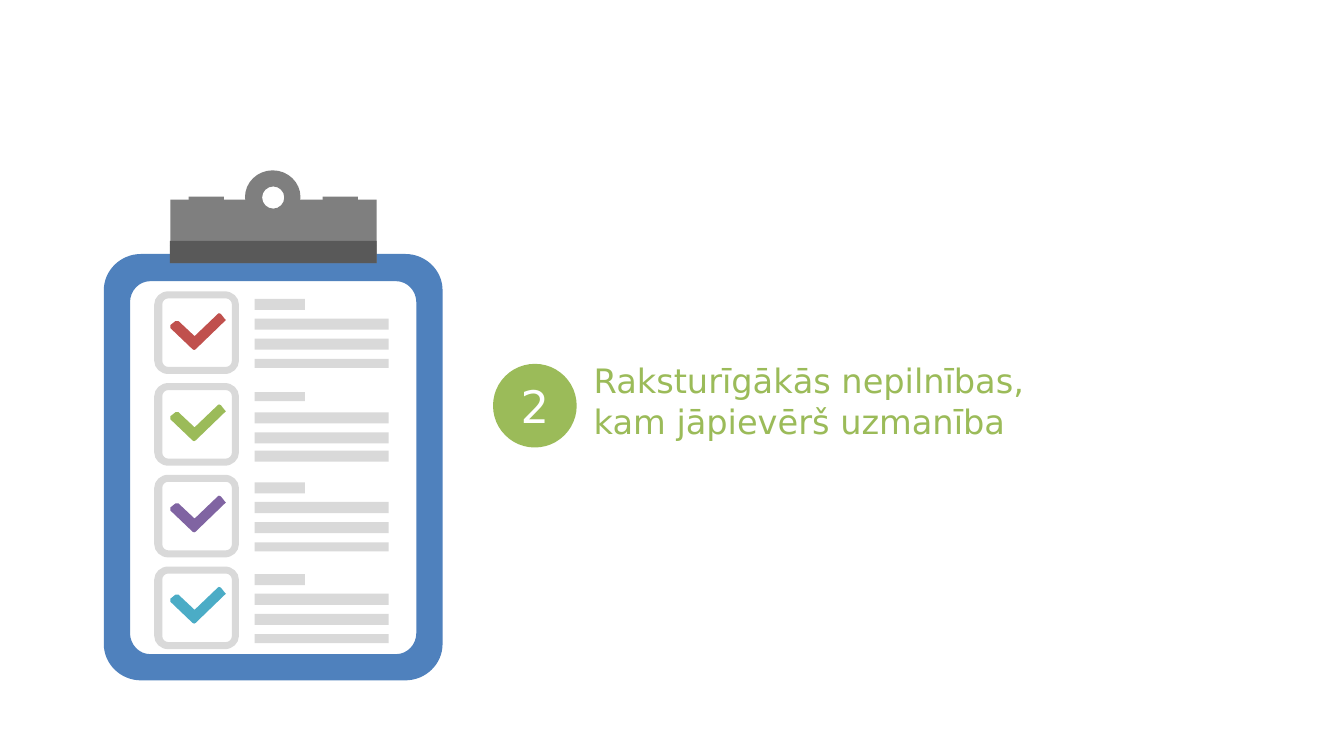
import pptx
import pptx.dml.color
import pptx.enum.shapes
import pptx.enum.text
import pptx.oxml
import pptx.util

COLORS = {
    "board": "4F81BD", "clamp": "7F7F7F", "band": "595959", "paper": "D9D9D9",
    "red": "C0504D", "green": "9BBB59", "purple": "8064A2", "teal": "4BACC6",
    "white": "FFFFFF",
}
FONT = "DejaVu Sans"
UNIT = pptx.util.Inches(0.01)  # grid cell: the slide has 1333 columns, 750 rows
RECT = pptx.enum.shapes.MSO_SHAPE.RECTANGLE
OVAL = pptx.enum.shapes.MSO_SHAPE.OVAL

prs = pptx.Presentation()
prs.slide_width, prs.slide_height = 1333 * UNIT, 750 * UNIT
s = prs.slides.add_slide(prs.slide_layouts[6])


def add_piece(fill, box=None, kind=RECT, outlines=(), dy=0):
    """Add a preset in a box, or outlines of segments: 1 point a line, 3 a curve."""
    if box:
        x, y, w, h = box
        sp = s.shapes.add_shape(kind, *(round(v * UNIT) for v in (x, y + dy, w, h)))
    else:
        fb = None
        for outline in outlines:
            points = [(round(x * UNIT), round((y + dy) * UNIT))
                      for segment in outline for x, y in segment]
            if fb:
                fb.move_to(*points[0])
            else:
                fb = s.shapes.build_freeform(*points[0], scale=1.0)
            fb.add_line_segments(points[1:], close=False)
        sp = fb.convert_to_shape()
        # Join the points of each curve, and close each outline
        path = sp._element.xpath(".//a:path")[0]
        nodes = iter(list(path))
        for outline in outlines:
            for segment in outline:
                steps = [next(nodes) for point in segment]
                last = steps[0]
                if len(steps) == 3:
                    last = pptx.oxml.parse_xml(
                        '<a:cubicBezTo xmlns:a="http://schemas.openxmlformats.org/drawingml/2006/main"/>')
                    steps[0].addprevious(last)
                    for step in steps:
                        last.append(step[0])
                        path.remove(step)
            last.addnext(pptx.oxml.parse_xml(
                '<a:close xmlns:a="http://schemas.openxmlformats.org/drawingml/2006/main"/>'))
    sp.shadow.inherit = False
    sp.fill.solid()
    sp.fill.fore_color.rgb = pptx.dml.color.RGBColor.from_string(COLORS[fill])
    sp.line.fill.background()
    return sp


def write(sp, text, size=24, color="green", align="LEFT"):
    tf = sp.text_frame
    tf.word_wrap = True
    tf.vertical_anchor = pptx.enum.text.MSO_ANCHOR.MIDDLE
    for i, line in enumerate(text.split("\n")):
        p = tf.add_paragraph() if i else tf.paragraphs[0]
        p.alignment = pptx.enum.text.PP_ALIGN[align]
        r = p.add_run()
        r.text = line
        r.font.name = FONT
        r.font.size = pptx.util.Pt(size)
        r.font.color.rgb = pptx.dml.color.RGBColor.from_string(COLORS[color])


# Rounded outlines: left, top, right, bottom, horizontal and vertical radius
rounded = {
    "board": (103, 252, 439, 675, 37, 36), "sheet": (129, 279, 413, 649, 20, 21),
    "box": (153, 289, 237, 371, 14, 13), "box hole": (161, 296, 230, 364, 6, 6),
    "ring": (243, 169, 298, 222, 27.5, 26.5), "ring hole": (260, 185, 282, 207, 11, 11),
}
outlines = {}
for name, (x1, y1, x2, y2, rx, ry) in rounded.items():
    kx, ky = 0.45 * rx, 0.45 * ry  # from a corner to the curve's handles
    outline = [
        [(x1 + rx, y1)], [(x1 + kx, y1), (x1, y1 + ky), (x1, y1 + ry)],
        [(x1, y2 - ry)], [(x1, y2 - ky), (x1 + kx, y2), (x1 + rx, y2)],
        [(x2 - rx, y2)], [(x2 - kx, y2), (x2, y2 - ky), (x2, y2 - ry)],
        [(x2, y1 + ry)], [(x2, y1 + ky), (x2 - kx, y1), (x2 - rx, y1)],
    ]
    if "ring" in name:  # a round outline has no straight sides
        outline = outline[:1] + outline[1::2]
    outlines[name] = outline

# Clipboard
add_piece("board", outlines=[outlines["sheet"], outlines["board"]])

# Clamp with a round notch under its ring
clamp = [[(286, 198)], [(285, 207), (279, 215), (271, 215)],
         [(263, 215), (256, 207), (256, 198)],
         [(169, 198)], [(169, 261)], [(373.5, 261)], [(373.5, 198)]]
add_piece("clamp", outlines=[clamp])
add_piece("band", (168.5, 244, 205, 17))
add_piece("clamp", outlines=[outlines["ring hole"], outlines["ring"]])
add_piece("band", (168.5, 239, 205, 5))
for x in (187, 320):
    add_piece("clamp", (x, 195, 35, 8.5))

# Checklist rows: framed box, text bars and tick
tick = [[(224, 317)], [(223, 316)], [(219, 311)], [(218, 310), (216, 310), (216, 311)],
        [(193, 333)], [(177, 318)], [(176, 318)], [(174, 318)], [(169, 322)],
        [(169, 323), (169, 325), (169, 325)], [(191, 346)],
        [(192, 347), (193, 347), (194, 346)], [(223, 318)]]
bars = [(7.5, 11), (27, 11), (47, 11), (67, 9)]
low_bars = [(9, 9), (29, 11), (49, 11), (67, 11)]
rows = [("red", bars), ("green", low_bars), ("purple", bars), ("teal", bars)]
for i, (color, row_bars) in enumerate(rows):
    dy = 91 * i
    if i == 3:
        # Section number and title
        sp = add_piece("green", (489, 361, 83, 83), OVAL)
        write(sp, "2", size=32, color="white", align="CENTER")
        sp = s.shapes.add_textbox(579 * UNIT, 352 * UNIT, 570 * UNIT, 91 * UNIT)
        sp.text_frame.auto_size = pptx.enum.text.MSO_AUTO_SIZE.SHAPE_TO_FIT_TEXT
        write(sp, "Raksturīgākās nepilnības,\nkam jāpievērš uzmanība")
    add_piece("paper", outlines=[outlines["box hole"], outlines["box"]], dy=dy)
    for j, (top, height) in enumerate(row_bars):
        add_piece("paper", (252.5, 289 + top, 133 if j else 50, height), dy=dy)
    add_piece(color, outlines=[tick], dy=0.5 + 90.5 * i)

prs.save("out.pptx")
